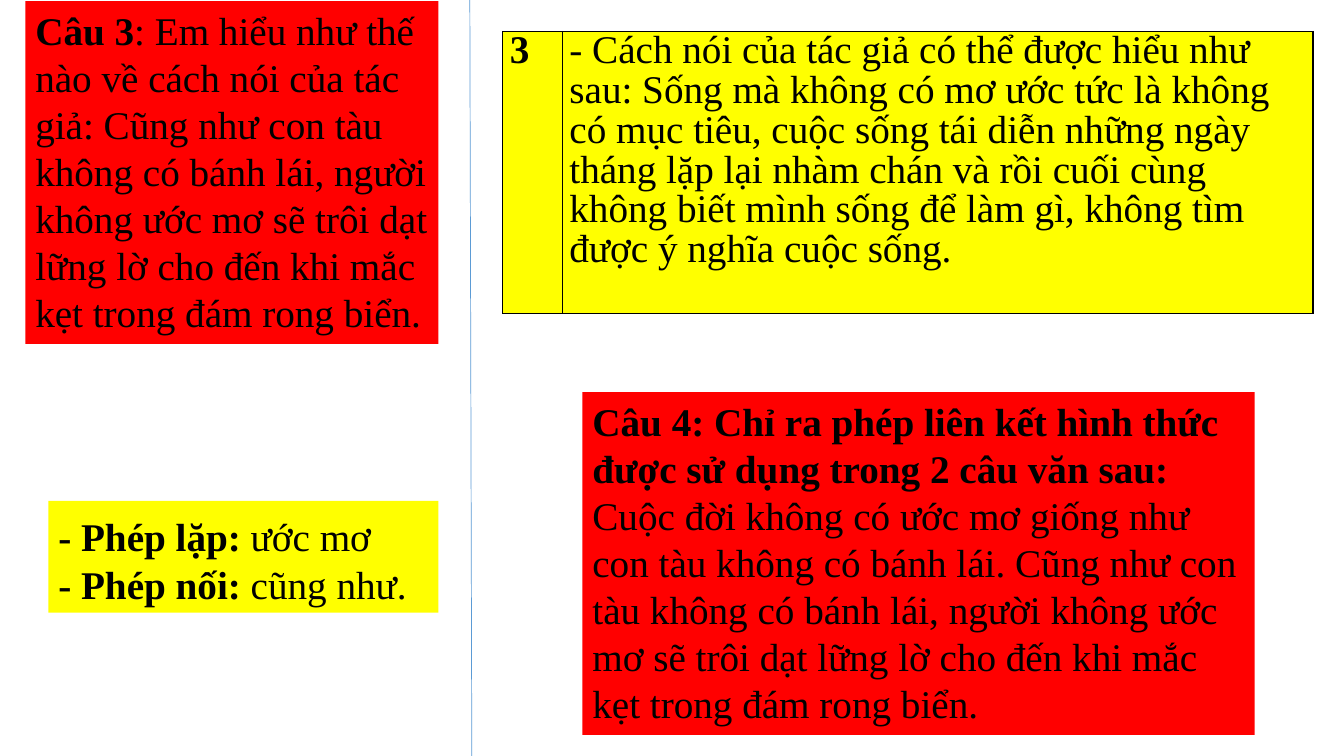
from dataclasses import dataclass

from lxml.etree import SubElement
from pptx import Presentation
from pptx.dml.color import RGBColor
from pptx.enum.shapes import MSO_CONNECTOR
from pptx.enum.text import MSO_AUTO_SIZE
from pptx.oxml.ns import qn
from pptx.util import Cm, Pt


@dataclass(frozen=True)
class Theme:
    font: str = "Times New Roman"
    text_size: float = 28
    text: str = "000000"
    question: str = "FF0000"
    answer: str = "FFFF00"
    divider: str = "5B9BD5"
    divider_width: float = 0.5
    border_width: float = 1


class SlideBuilder:
    def __init__(self, slide, theme):
        self.slide = slide
        self.theme = theme

    def add_text(self, frame, paragraphs, spacings):
        for index, (runs, spacing) in enumerate(zip(paragraphs, spacings)):
            paragraph = frame.paragraphs[0] if index == 0 else frame.add_paragraph()
            paragraph.line_spacing = spacing
            for text, bold in runs:
                run = paragraph.add_run()
                run.text = text
                run.font.name = self.theme.font
                run.font.size = Pt(self.theme.text_size)
                run.font.bold = bold
                run.font.color.rgb = RGBColor.from_string(self.theme.text)

    def divider(self, start, end):
        line = self.slide.shapes.add_connector(
            MSO_CONNECTOR.STRAIGHT, *map(Cm, start), *map(Cm, end)
        )
        line.line.color.rgb = RGBColor.from_string(self.theme.divider)
        line.line.width = Pt(self.theme.divider_width)
        SubElement(line._element.spPr, qn("a:effectLst"))

    def text_box(self, left, top, width, height, color, paragraphs, spacings=(1.0,)):
        box = self.slide.shapes.add_textbox(Cm(left), Cm(top), Cm(width), Cm(height))
        box.fill.solid()
        box.fill.fore_color.rgb = RGBColor.from_string(color)
        box.text_frame.word_wrap = True
        box.text_frame.auto_size = MSO_AUTO_SIZE.SHAPE_TO_FIT_TEXT
        self.add_text(box.text_frame, paragraphs, spacings)

    def add_borders(self, cell):
        properties = cell._tc.get_or_add_tcPr()
        for side in ("lnL", "lnR", "lnT", "lnB"):
            border = SubElement(
                properties, qn(f"a:{side}"), w=str(Pt(self.theme.border_width))
            )
            fill = SubElement(border, qn("a:solidFill"))
            SubElement(fill, qn("a:srgbClr"), val=self.theme.text)

    def answer_table(self, left, top, widths, height, row, spacing):
        table = self.slide.shapes.add_table(
            1, len(widths), Cm(left), Cm(top), Cm(sum(widths)), Cm(height)
        ).table
        table.first_row = False
        table.horz_banding = False
        for index, (width, run) in enumerate(zip(widths, row)):
            table.columns[index].width = Cm(width)
            cell = table.cell(0, index)
            cell.margin_left = cell.margin_right = Cm(0.18)
            cell.margin_top = cell.margin_bottom = Cm(0)
            self.add_borders(cell)
            cell.fill.solid()
            cell.fill.fore_color.rgb = RGBColor.from_string(self.theme.answer)
            self.add_text(cell.text_frame, [[run]], [spacing])


def main():
    presentation = Presentation()
    presentation.slide_width = Cm(33.87)
    presentation.slide_height = Cm(19.05)
    theme = Theme()
    slide = presentation.slides.add_slide(presentation.slide_layouts[6])
    builder = SlideBuilder(slide, theme)

    builder.divider((11.84, 0), (11.89, 19.05))
    builder.text_box(0.64, 0.03, 10.41, 8.64, theme.question, [[
        ("Câu 3", True),
        (": Em hiểu như thế nào về cách nói của tác giả: Cũng như con tàu "
         "không có bánh lái, người không ước mơ sẽ trôi dạt lững lờ cho đến "
         "khi mắc kẹt trong đám rong biển.", False),
    ]])
    builder.answer_table(12.67, 0.79, (1.5, 18.92), 7.11, [
        ("3", True),
        ("- Cách nói của tác giả có thể được hiểu như sau: Sống mà không có "
         "mơ ước tức là không có mục tiêu, cuộc sống tái diễn những ngày "
         "tháng lặp lại nhàm chán và rồi cuối cùng không biết mình sống để "
         "làm gì, không tìm được ý nghĩa cuộc sống.", False),
    ], 0.92)
    builder.text_box(14.68, 9.88, 16.94, 8.64, theme.question, [[
        ("Câu 4: Chỉ ra phép liên kết hình thức được sử dụng trong 2 câu "
         "văn sau: ", True),
        ("Cuộc đời không có ước mơ giống như con tàu không có bánh lái. Cũng "
         "như con tàu không có bánh lái, người không ước mơ sẽ trôi dạt lững "
         "lờ cho đến khi mắc kẹt trong đám rong biển.", False),
    ]])
    builder.text_box(1.22, 12.62, 9.83, 2.82, theme.answer, [
        [("- Phép lặp: ", True), ("ước mơ", False)],
        [("- Phép nối: ", True), ("cũng như.", False)],
    ], (1.15, 1.0))

    presentation.save("out.pptx")


if __name__ == "__main__":
    main()
